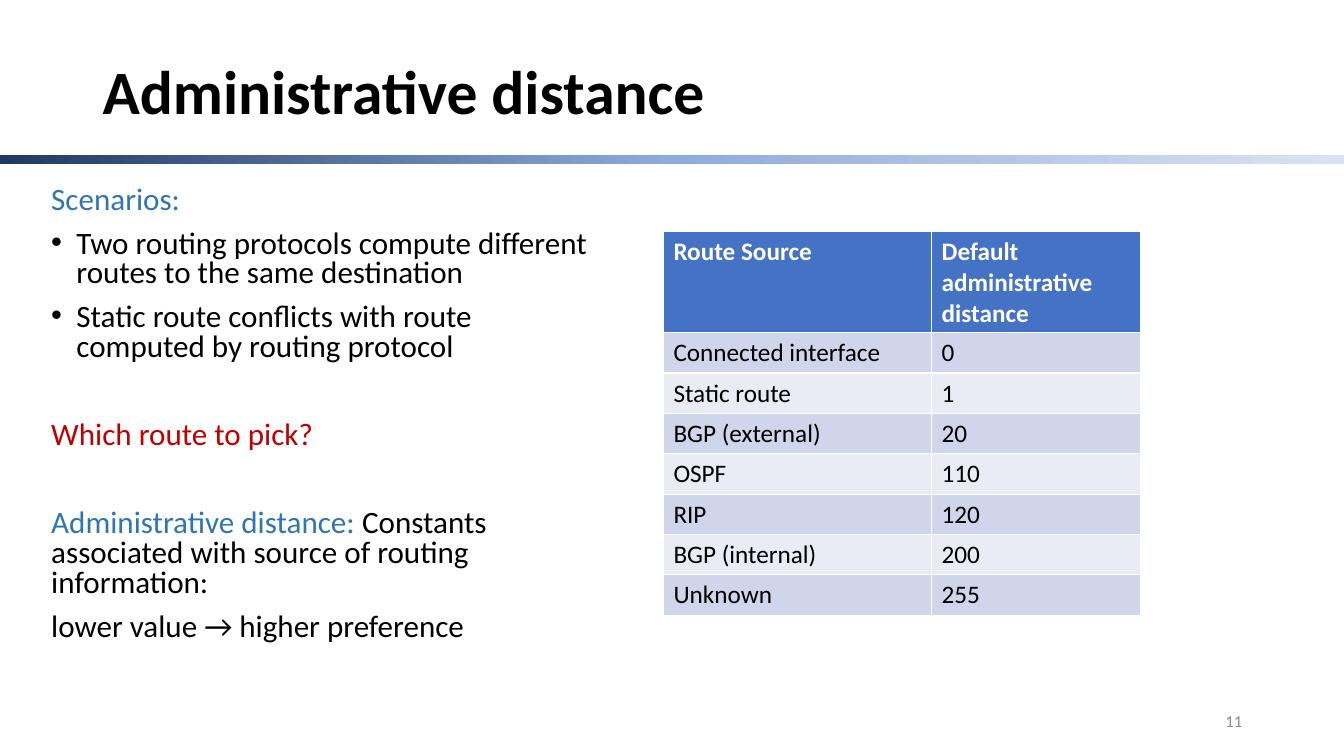
from copy import deepcopy

from lxml.etree import SubElement
from pptx import Presentation
from pptx.dml.color import RGBColor
from pptx.enum.shapes import MSO_SHAPE
from pptx.enum.text import MSO_ANCHOR, PP_ALIGN
from pptx.oxml.ns import qn
from pptx.util import Inches, Pt

BLACK = RGBColor(0x00, 0x00, 0x00)
WHITE = RGBColor(0xFF, 0xFF, 0xFF)
BLUE = RGBColor(0x2E, 0x75, 0xB6)
RED = RGBColor(0xC0, 0x00, 0x00)
GREY = RGBColor(0x8C, 0x8C, 0x8C)
HEADER = RGBColor(0x44, 0x72, 0xC4)
BANDS = [RGBColor(0xE9, 0xEB, 0xF5), RGBColor(0xCF, 0xD5, 0xEA)]
BAR_STOPS = [
    (0, RGBColor(0x20, 0x38, 0x64)),
    (0.5, RGBColor(0x8F, 0xAA, 0xDC)),
    (1, RGBColor(0xDA, 0xE3, 0xF3)),
]

WIDTH, HEIGHT = 13.33, 7.5
TITLE = "Administrative distance"
PAGE = "11"
GAP, WIDE_GAP = 10, 41.6
BODY = [
    (GAP, False, [("Scenarios:", BLUE)]),
    (GAP, True, [("Two routing protocols compute different routes to the same destination", BLACK)]),
    (GAP, True, [("Static route conflicts with route \ncomputed by routing protocol", BLACK)]),
    (WIDE_GAP, False, [("Which route to pick?", RED)]),
    (WIDE_GAP, False, [
        ("Administrative distance: ", BLUE),
        ("Constants associated with source of routing information:", BLACK),
    ]),
    (GAP, False, [("lower value → higher preference", BLACK)]),
]
ROUTES = [
    ("Route Source", "Default administrative distance"),
    ("Connected interface", "0"),
    ("Static route", "1"),
    ("BGP (external)", "20"),
    ("OSPF", "110"),
    ("RIP", "120"),
    ("BGP (internal)", "200"),
    ("Unknown", "255"),
]
COLUMNS = [2.66, 2.07]
HEADER_ROW, ROUTE_ROW = 1, 0.4


def add_text(p, text, size, color, bold=False):
    for i, line in enumerate(text.split("\n")):
        if i:
            p.add_line_break()
        r = p.add_run()
        r.text = line
        r.font.color.rgb = color
        for name, value in {"name": "Calibri", "size": Pt(size), "bold": bold}.items():
            setattr(r.font, name, value)


def add_box(s, box, anchor=MSO_ANCHOR.TOP):
    tf = s.shapes.add_textbox(*map(Inches, box)).text_frame
    tf.word_wrap = True
    tf.vertical_anchor = anchor
    return tf


def add_bar(s):
    sp = s.shapes.add_shape(MSO_SHAPE.RECTANGLE, 0, Inches(1.54), Inches(WIDTH), Inches(0.09))
    sp.shadow.inherit = False
    sp.line.fill.background()
    sp.fill.gradient()
    sp.fill.gradient_angle = 0
    stops = sp._element.spPr.find(qn("a:gradFill")).find(qn("a:gsLst"))
    stops.append(deepcopy(stops[0]))
    for stop, (position, color) in zip(sp.fill.gradient_stops, BAR_STOPS):
        stop.position = position
        stop.color.rgb = color


def add_body(s):
    tf = add_box(s, (0.41, 1.8, 5.71, 4.97))
    for i, (gap, bulleted, runs) in enumerate(BODY):
        p = tf.add_paragraph() if i else tf.paragraphs[0]
        p.line_spacing = 0.8
        p.space_before = Pt(gap)
        if bulleted:
            pPr = p._p.get_or_add_pPr()
            pPr.set("marL", str(Inches(0.25)))
            pPr.set("indent", str(Inches(-0.25)))
            SubElement(pPr, qn("a:buFont")).set("typeface", "Arial")
            SubElement(pPr, qn("a:buChar")).set("char", "•")
        for text, color in runs:
            add_text(p, text, 22.2, color)


def add_routes(s):
    heights = [HEADER_ROW] + [ROUTE_ROW] * (len(ROUTES) - 1)
    box = (6.58, 2.3, sum(COLUMNS), sum(heights))
    table = s.shapes.add_table(len(ROUTES), len(COLUMNS), *map(Inches, box)).table
    for column, width in zip(table.columns, COLUMNS):
        column.width = Inches(width)
    for i, (values, height) in enumerate(zip(ROUTES, heights)):
        table.rows[i].height = Inches(height)
        for j, value in enumerate(values):
            cell = table.cell(i, j)
            cell.fill.solid()
            cell.fill.fore_color.rgb = BANDS[i % 2] if i else HEADER
            add_text(cell.text_frame.paragraphs[0], value, 18, BLACK if i else WHITE, not i)


def main():
    prs = Presentation()
    prs.slide_width, prs.slide_height = Inches(WIDTH), Inches(HEIGHT)
    s = prs.slides.add_slide(prs.slide_layouts[6])
    add_bar(s)
    p = add_box(s, (0.92, 0.31, 8.5, 1.25), MSO_ANCHOR.MIDDLE).paragraphs[0]
    p.line_spacing = 0.9
    add_text(p, TITLE, 44, BLACK, True)
    add_body(s)
    add_routes(s)
    p = add_box(s, (9.42, 6.95, 3, 0.4), MSO_ANCHOR.MIDDLE).paragraphs[0]
    p.alignment = PP_ALIGN.RIGHT
    add_text(p, PAGE, 12, GREY)
    prs.save("out.pptx")


if __name__ == "__main__":
    main()
